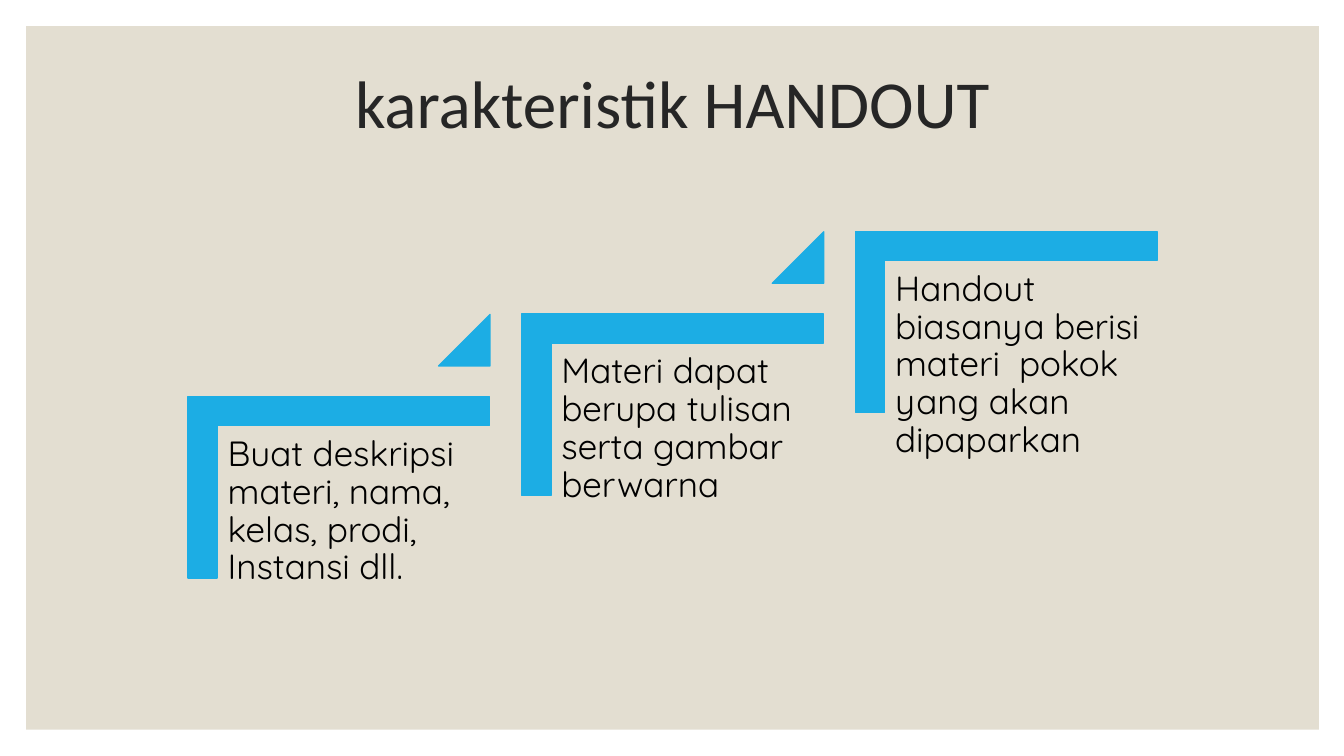
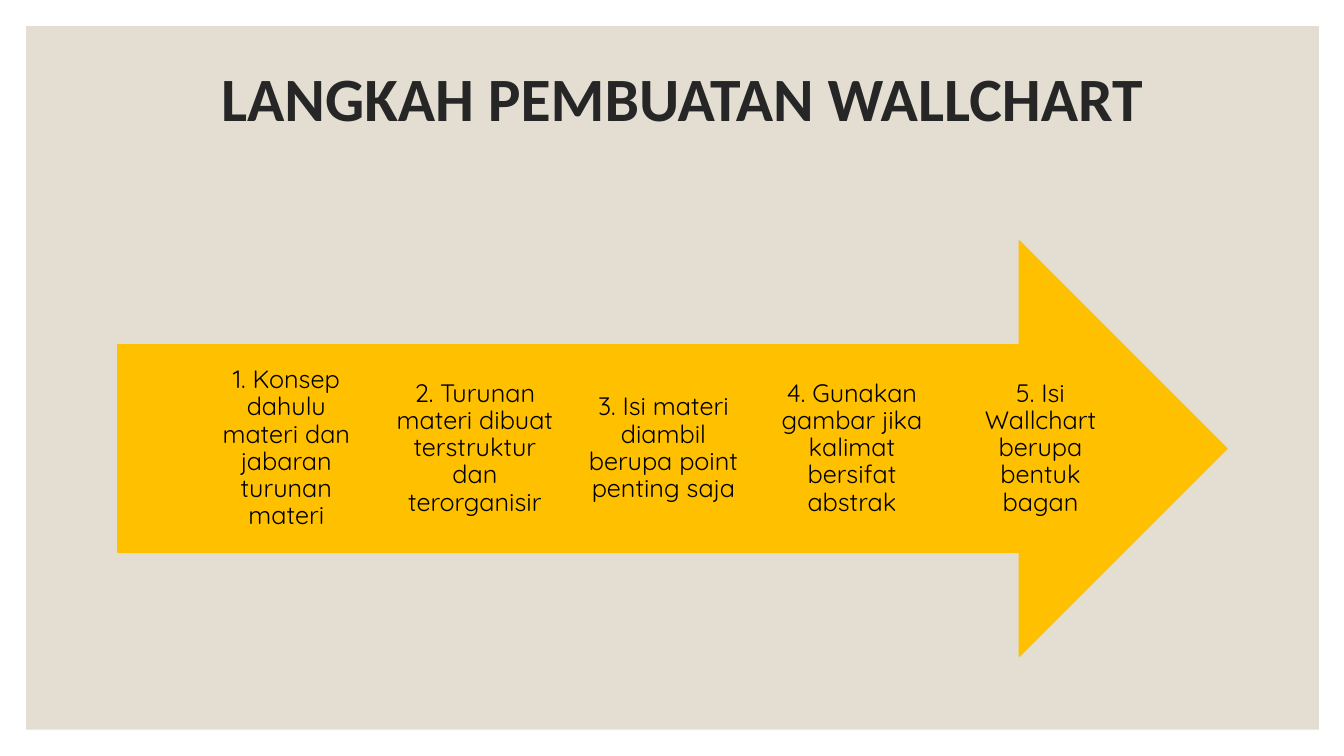
from pptx import Presentation
from pptx.dml.color import RGBColor
from pptx.enum.shapes import MSO_SHAPE
from pptx.enum.text import MSO_ANCHOR, PP_ALIGN
from pptx.util import Inches, Pt

RECTANGLE = MSO_SHAPE.RECTANGLE
CORNER = MSO_SHAPE.CORNER
TRIANGLE = MSO_SHAPE.ISOSCELES_TRIANGLE
RIGHT_ARROW = MSO_SHAPE.RIGHT_ARROW
TOP, MIDDLE = MSO_ANCHOR.TOP, MSO_ANCHOR.MIDDLE
LEFT, CENTER = PP_ALIGN.LEFT, PP_ALIGN.CENTER

COLORS = {
    "panel": "E3DED1",
    "title": "262626",
    "body": "000000",
    "stair": "1CADE4",
    "arrow": "FFC000",
}
TITLE_FONT, BODY_FONT = "Calibri", "Quicksand"

CHARACTERISTICS = [
    "Buat deskripsi materi, nama, kelas, prodi, Instansi dll.",
    "Materi dapat berupa tulisan serta gambar berwarna",
    "Handout biasanya berisi materi  pokok yang akan dipaparkan",
]
WALLCHART_STEPS = [
    "1. Konsep dahulu materi dan jabaran turunan materi",
    "2. Turunan materi dibuat terstruktur dan terorganisir",
    "3. Isi materi diambil berupa point penting saja",
    "4. Gunakan gambar jika kalimat bersifat abstrak",
    "5. Isi Wallchart berupa bentuk bagan",
]


def rgb(name):
    return RGBColor.from_string(COLORS[name])


def add_text(slide, text, left, top, width, height, *, size, font=BODY_FONT,
             color="body", bold=False, align=LEFT, anchor=TOP, insets=(0.1, 0.1)):
    """Add a wrapped text box; insets are (horizontal, vertical) in inches."""
    box = slide.shapes.add_textbox(Inches(left), Inches(top), Inches(width), Inches(height))
    frame = box.text_frame
    frame.word_wrap = True
    frame.vertical_anchor = anchor
    frame.margin_left = frame.margin_right = Inches(insets[0])
    frame.margin_top = frame.margin_bottom = Inches(insets[1])
    paragraph = frame.paragraphs[0]
    paragraph.alignment = align
    paragraph.line_spacing = 0.9
    run = paragraph.add_run()
    run.text = text
    run.font.name = font
    run.font.size = Pt(size)
    run.font.bold = bold
    run.font.color.rgb = rgb(color)


def add_solid(slide, preset, left, top, width, height, color, *,
              outlined=True, adjustments=(), rotation=0):
    """Add a preset shape whose outline, if any, matches its fill."""
    shape = slide.shapes.add_shape(
        preset, Inches(left), Inches(top), Inches(width), Inches(height))
    shape.shadow.inherit = False
    shape.rotation = rotation
    for index, value in enumerate(adjustments):
        shape.adjustments[index] = value
    shape.fill.solid()
    shape.fill.fore_color.rgb = rgb(color)
    if outlined:
        shape.line.color.rgb = rgb(color)
        shape.line.width = Pt(1)
    else:
        shape.line.fill.background()


def add_titled_slide(deck, title, left, top, *, size, bold=False):
    slide = deck.slides.add_slide(deck.slide_layouts[6])
    add_solid(slide, RECTANGLE, 0.26, 0.26, 12.82, 6.98, "panel", outlined=False)
    add_text(slide, title, left, top, 11, 1.5, size=size, bold=bold, font=TITLE_FONT,
             color="title", align=CENTER, anchor=MIDDLE, insets=(0.1, 0.05))
    return slide


def add_staircase(slide, labels):
    """Place each label under a corner, rising to the right, with triangles between."""
    run, rise = 3.31, 0.82
    for index, label in enumerate(labels):
        across, up = index * run, index * rise
        add_solid(slide, CORNER, 2.46 + across, 3.34 - up, 1.8, 2.99, "stair",
                  adjustments=(0.16, 0.16), rotation=90)
        add_text(slide, label, 2.16 + across, 4.23 - up, 2.7, 2.36, size=25)
        if index < len(labels) - 1:
            add_solid(slide, TRIANGLE, 4.35 + across, 3.12 - up, 0.51, 0.51, "stair",
                      adjustments=(1,))


def add_step_arrow(slide, steps):
    """Draw one large arrow with the steps evenly spaced along its shaft."""
    top, height = 2.39, 4.12
    add_solid(slide, RIGHT_ARROW, 1.17, top, 11, height, "arrow")
    for index, step in enumerate(steps):
        add_text(slide, step, 2.06 + index * 1.87, top + height / 4, 1.56, height / 2,
                 size=18, align=CENTER, anchor=MIDDLE, insets=(0, 0.2))


def main():
    deck = Presentation()
    deck.slide_width, deck.slide_height = Inches(13.33), Inches(7.5)

    handout = add_titled_slide(deck, "karakteristik HANDOUT", 1.17, 0.31, size=48)
    add_staircase(handout, CHARACTERISTICS)

    wallchart = add_titled_slide(
        deck, "LANGKAH PEMBUATAN WALLCHART", 1.27, 0.26, size=44, bold=True)
    add_step_arrow(wallchart, WALLCHART_STEPS)

    deck.save("out.pptx")


if __name__ == "__main__":
    main()
